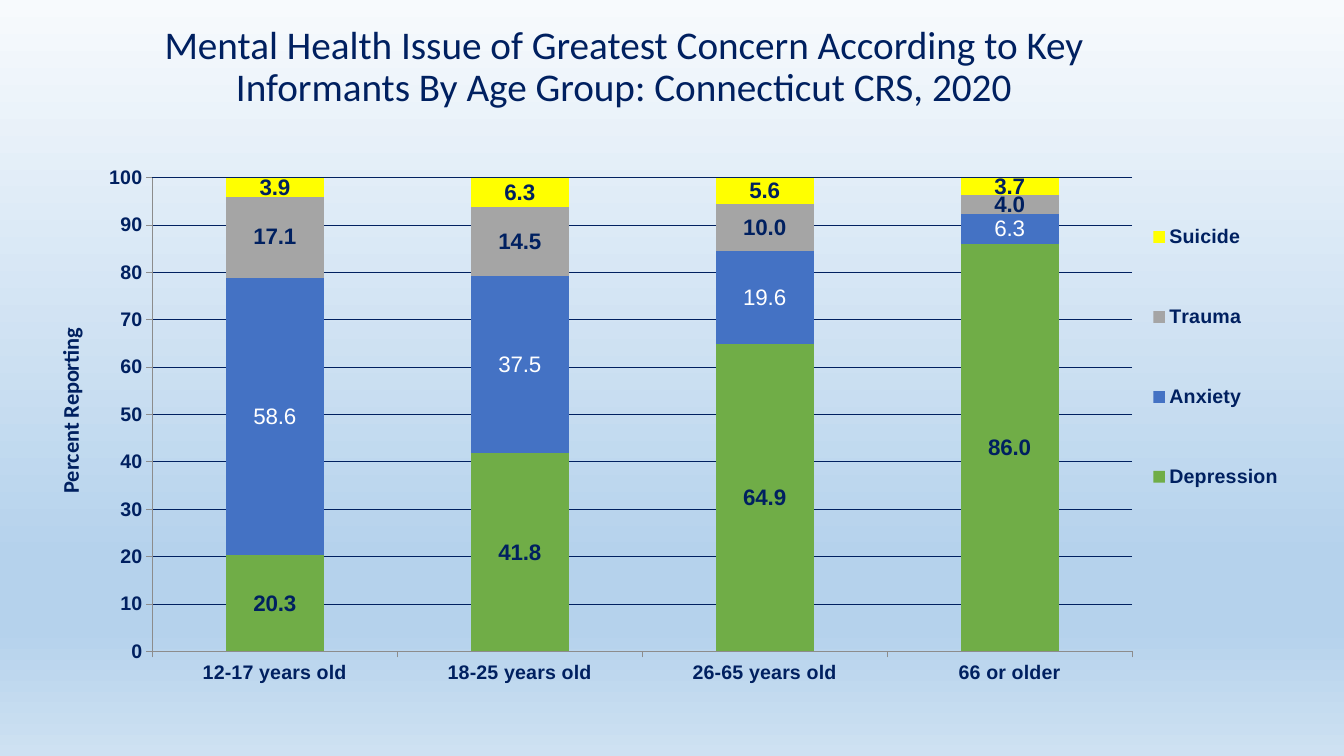
"""Build a slide with a stacked column chart of mental health concerns by age group."""
from dataclasses import dataclass

from lxml import etree
from pptx import Presentation
from pptx.chart import data as chart_data
from pptx.dml.color import RGBColor
from pptx.enum import chart as chart_enum, text
from pptx.oxml import ns
from pptx.util import Cm, Pt

NAVY = RGBColor(0x00, 0x20, 0x60)
WHITE = RGBColor(0xFF, 0xFF, 0xFF)
GREY_LINE = RGBColor(0x8C, 0x8C, 0x8C)
GREEN = RGBColor(0x70, 0xAD, 0x47)
BLUE = RGBColor(0x44, 0x72, 0xC4)
GREY = RGBColor(0xA5, 0xA5, 0xA5)
YELLOW = RGBColor(0xFF, 0xFF, 0x00)
SKY_TOP = RGBColor(0xF7, 0xFA, 0xFD)
SKY_DEEP = RGBColor(0xB5, 0xD2, 0xEC)
SKY_BOTTOM = RGBColor(0xCE, 0xE1, 0xF2)
SKY_STOPS = ((0, SKY_TOP), (74, SKY_DEEP), (83, SKY_DEEP), (100, SKY_BOTTOM))

TITLE = ("Mental Health Issue of Greatest Concern According to Key Informants "
         "By Age Group: Connecticut CRS, 2020")
AGE_GROUPS = ("12-17 years old", "18-25 years old", "26-65 years old", "66 or older")


@dataclass(frozen=True)
class Issue:
    """One stacked series with its colours."""
    name: str
    percents: tuple[float, ...]
    fill: RGBColor
    label_color: RGBColor = NAVY
    label_bold: bool = True


ISSUES = (
    Issue("Depression", (20.3, 41.8, 64.9, 86.0), GREEN),
    Issue("Anxiety", (58.6, 37.5, 19.6, 6.3), BLUE, WHITE, False),
    Issue("Trauma", (17.1, 14.5, 10.0, 4.0), GREY),
    Issue("Suicide", (3.9, 6.3, 5.6, 3.7), YELLOW),
)


def style_font(font, size: float, color: RGBColor = NAVY, bold: bool = True,
               name: str = "Arial") -> None:
    """Set size, colour, weight and typeface of a font."""
    font.size, font.bold, font.name = Pt(size), bold, name
    font.color.rgb = color


def paint_background(page) -> None:
    """Fill the page with a vertical gradient."""
    fill = page.background.fill
    fill.gradient()
    fill.gradient_angle = 270
    stop_list = next(page.element.iter(ns.qn("a:gsLst")))
    for stop in list(stop_list):
        stop_list.remove(stop)
    for percent, color in SKY_STOPS:
        stop = etree.SubElement(stop_list, ns.qn("a:gs"), pos=str(percent * 1000))
        etree.SubElement(stop, ns.qn("a:srgbClr"), val=str(color))


def place(element, index: int, inner: bool = False, **fractions: float) -> None:
    """Give a chart part a manual layout in fractions of the chart."""
    for old in element.findall(ns.qn("c:layout")):
        element.remove(old)
    layout = etree.Element(ns.qn("c:layout"))
    manual = etree.SubElement(layout, ns.qn("c:manualLayout"))
    settings = {"layoutTarget": "inner"} if inner else {}
    settings |= {"xMode": "edge", "yMode": "edge"}
    settings |= {key: str(value) for key, value in fractions.items()}
    for tag, value in settings.items():
        etree.SubElement(manual, ns.qn(f"c:{tag}"), val=value)
    element.insert(index, layout)


def add_title(page) -> None:
    """Add the centred heading."""
    box = page.shapes.add_textbox(Cm(2.64), Cm(0.51), Cm(26.16), Cm(2.41))
    frame = box.text_frame
    frame.word_wrap = True
    frame.vertical_anchor = text.MSO_ANCHOR.MIDDLE
    para = frame.paragraphs[0]
    para.text = TITLE
    para.alignment = text.PP_ALIGN.CENTER
    para.line_spacing = 0.9
    style_font(para.font, 28, bold=False, name="Calibri")


def style_axes(chart) -> None:
    """Format both axes, the gridlines and the value axis title."""
    values = chart.value_axis
    for axis in (chart.category_axis, values):
        style_font(axis.tick_labels.font, 14)
        axis.format.line.color.rgb = GREY_LINE
        axis.format.line.width = Pt(0.5)
        axis.major_tick_mark = chart_enum.XL_TICK_MARK.OUTSIDE
    values.minimum_scale, values.maximum_scale, values.major_unit = 0, 100, 10
    values.tick_labels.number_format = "0"
    values.tick_labels.number_format_is_linked = False
    values.has_major_gridlines = True
    grid_line = values.major_gridlines.format.line
    grid_line.color.rgb = NAVY
    grid_line.width = Pt(0.5)
    frame = values.axis_title.text_frame
    frame.text = "Percent Reporting"
    style_font(frame.paragraphs[0].font, 16, name="Calibri")
    title = next(chart.element.iter(ns.qn("c:title")))
    body = next(title.iter(ns.qn("a:bodyPr")))
    body.set("rot", "-5400000")
    body.set("vert", "horz")
    place(title, 1, x=0.015, y=0.32)


def add_issue_chart(page) -> None:
    """Add the stacked column chart with its legend."""
    data = chart_data.CategoryChartData(number_format="0.0")
    data.categories = AGE_GROUPS
    for issue in ISSUES:
        data.add_series(issue.name, issue.percents)
    chart = page.shapes.add_chart(
        chart_enum.XL_CHART_TYPE.COLUMN_STACKED,
        Cm(0.81), Cm(3.33), Cm(31.9), Cm(15.11), data).chart
    chart.has_title = False
    style_font(chart.font, 18, bold=False, name="Calibri")
    style_axes(chart)
    plot = chart.plots[0]
    plot.gap_width, plot.overlap, plot.vary_by_categories = 150, 100, False
    for series, issue in zip(plot.series, ISSUES):
        series.format.fill.solid()
        series.format.fill.fore_color.rgb = issue.fill
        labels = series.data_labels
        labels.show_value = True
        labels.number_format, labels.number_format_is_linked = "0.0", False
        style_font(labels.font, 16, issue.label_color, issue.label_bold)
    chart.has_legend = True
    legend = chart.legend
    legend.position = chart_enum.XL_LEGEND_POSITION.RIGHT
    legend.include_in_layout = False
    style_font(legend.font, 14)
    place(next(chart.element.iter(ns.qn("c:legend"))), 1,
          x=0.87, y=0.06, w=0.13, h=0.63)
    place(next(chart.element.iter(ns.qn("c:plotArea"))), 0, inner=True,
          x=0.095, y=0.076, w=0.774, h=0.79)


def main() -> None:
    """Build and save the deck."""
    deck = Presentation()
    deck.slide_width, deck.slide_height = Cm(33.87), Cm(19.05)
    page = deck.slides.add_slide(deck.slide_layouts[6])
    paint_background(page)
    add_title(page)
    add_issue_chart(page)
    deck.save("out.pptx")


if __name__ == "__main__":
    main()
